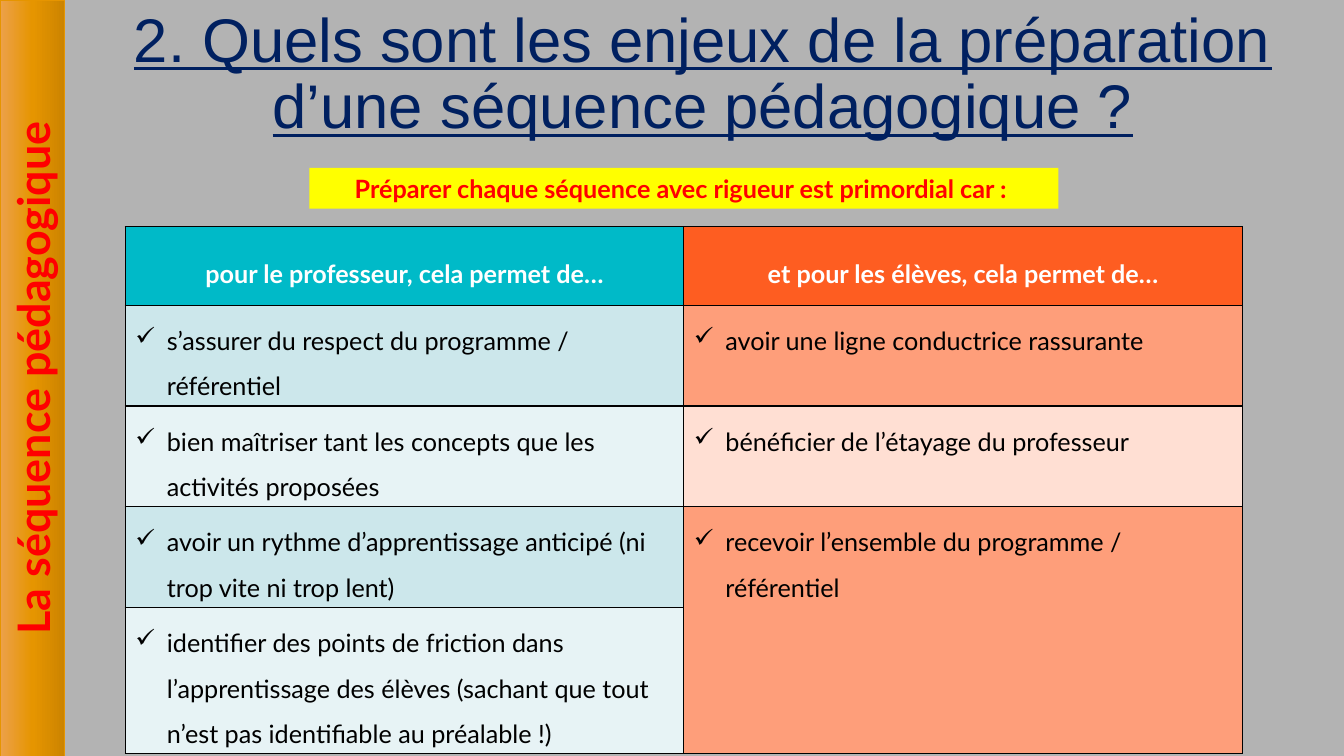
from copy import deepcopy

from lxml import etree
from pptx import Presentation
from pptx import util as u
from pptx.dml.color import RGBColor
from pptx.enum import shapes, text
from pptx.oxml.ns import qn

Pt = u.Pt
MID = text.MSO_ANCHOR.MIDDLE
LEFT, MIX = text.PP_ALIGN.LEFT, text.PP_ALIGN.CENTER


class Theme:
    back, navy, red, yellow = "B3B3B3", "002060", "FF0000", "FFFF00"
    white, black, amber = "FFFFFF", "000000", "E69500"
    band = ["ECA14B", "E69500", "CC8400"]
    heads = ["00BAC8", "FE5D21"]
    odd = ["CCE7EB", "FE9E7A"]
    even = ["E7F3F5", "FFDFD3"]
    title, side, body = 44, 32, 18
    sans, lato = "Arial", "Lato"


def rgb(code):
    return RGBColor.from_string(code)


class Page:
    def __init__(self, slide, theme):
        self.slide, self.look = slide, theme
        slide.background.fill.solid()
        slide.background.fill.fore_color.rgb = rgb(theme.back)

    def phrase(self, frame, words, color, size, space=1.0, align=MIX, **form):
        """Fill a text frame with one styled paragraph."""
        frame.word_wrap = True
        para = frame.paragraphs[0]
        para.alignment, para.line_spacing = align, space
        run = para.add_run()
        run.text = words
        run.font.color.rgb = rgb(color)
        for key, val in {"name": self.look.lato, "size": Pt(size), **form}.items():
            setattr(run.font, key, val)
        return para

    def label(self, box, words, color, size, **form):
        """Centred text box."""
        item = self.slide.shapes.add_textbox(*map(Pt, box))
        item.text_frame.vertical_anchor = MID
        self.phrase(item.text_frame, words, color, size, **form)

    def block(self, box, words, color, size, fill):
        """Rectangle with bold text; a list of colours gives a gradient."""
        item = self.slide.shapes.add_shape(shapes.MSO_SHAPE.RECTANGLE, *map(Pt, box))
        item.shadow.inherit = False
        item.text_frame.vertical_anchor = MID
        if isinstance(fill, list):
            self.blend(item, fill)
        else:
            item.fill.solid()
            item.fill.fore_color.rgb = rgb(fill)
            item.line.fill.background()
        self.phrase(item.text_frame, words, color, size, bold=True)
        return item

    def blend(self, item, codes):
        """Three-stop gradient running from top to bottom of the shape."""
        item.fill.gradient()
        item.fill.gradient_angle = 270
        stops = item._element.spPr.find(".//" + qn("a:gsLst"))
        stops.insert(1, deepcopy(stops[0]))
        for num, (stop, code) in enumerate(zip(item.fill.gradient_stops, codes)):
            stop.position = num / 2
            stop.color.rgb = rgb(code)
        item.line.color.rgb = rgb(self.look.amber)
        item.line.width = Pt(0.5)

    def edge(self, cell):
        """Thin black border on all four sides."""
        props = cell._tc.get_or_add_tcPr()
        for num, side in enumerate(("a:lnL", "a:lnR", "a:lnT", "a:lnB")):
            line = etree.Element(qn(side), w=str(Pt(1)))
            fill = etree.SubElement(line, qn("a:solidFill"))
            etree.SubElement(fill, qn("a:srgbClr"), val=self.look.black)
            props.insert(num, line)

    def tick(self, para, indent):
        """Hanging check-mark bullet."""
        props = para._p.get_or_add_pPr()
        props.set("marL", str(Pt(indent)))
        props.set("indent", str(-Pt(indent)))
        etree.SubElement(props, qn("a:buChar"), char="✓")

    def grid(self, box, rows, highs):
        """Two-column table; None joins a cell to the one above."""
        look = self.look
        table = self.slide.shapes.add_table(len(rows), len(rows[0]), *map(Pt, box)).table
        table.horz_banding = False
        for row, high in zip(table.rows, highs):
            row.height = Pt(high)
        for r, row in enumerate(rows):
            fills = look.heads if r == 0 else look.odd if r % 2 else look.even
            for c, words in enumerate(row):
                cell = table.cell(r, c)
                cell.fill.solid()
                cell.fill.fore_color.rgb = rgb(fills[c])
                self.edge(cell)
                if words is None:
                    table.cell(r - 1, c).merge(cell)
                elif r == 0:
                    cell.vertical_anchor = MID
                    self.phrase(cell.text_frame, words, look.white, look.body, 1.5, bold=True)
                else:
                    para = self.phrase(cell.text_frame, words, look.black, look.body, 1.5,
                                       LEFT, bold=False)
                    self.tick(para, 22.5)


ROWS = [
    ("pour le professeur, cela permet de…", "et pour les élèves, cela permet de…"),
    ("s’assurer du respect du programme / référentiel",
     "avoir une ligne conductrice rassurante"),
    ("bien maîtriser tant les concepts que les activités proposées",
     "bénéficier de l’étayage du professeur"),
    ("avoir un rythme d’apprentissage anticipé (ni trop vite ni trop lent)",
     "recevoir l’ensemble du programme / référentiel"),
    ("identifier des points de friction dans l’apprentissage des élèves "
     "(sachant que tout n’est pas identifiable au préalable !)", None),
]


def main():
    deck = Presentation()
    deck.slide_width, deck.slide_height = Pt(960), Pt(540)
    look = Theme()
    page = Page(deck.slides.add_slide(deck.slide_layouts[6]), look)

    # Side band, turned to read upwards
    side = page.block((-247, 247, 540, 46), "La séquence pédagogique",
                      look.red, look.side, look.band)
    side.rotation = 270

    # Title
    page.label((65, 0, 874, 108),
               "2. Quels sont les enjeux de la préparation d’une séquence pédagogique ?",
               look.navy, look.title, space=0.9, name=look.sans, underline=True)

    # Banner
    page.block((221, 120, 535, 29),
               "Préparer chaque séquence avec rigueur est primordial car : ",
               look.red, look.body, look.yellow)

    # Benefits for teacher and pupils
    page.grid((89.5, 162, 798, 376), ROWS, (56, 72, 72, 72, 104))
    deck.save("out.pptx")


if __name__ == "__main__":
    main()
